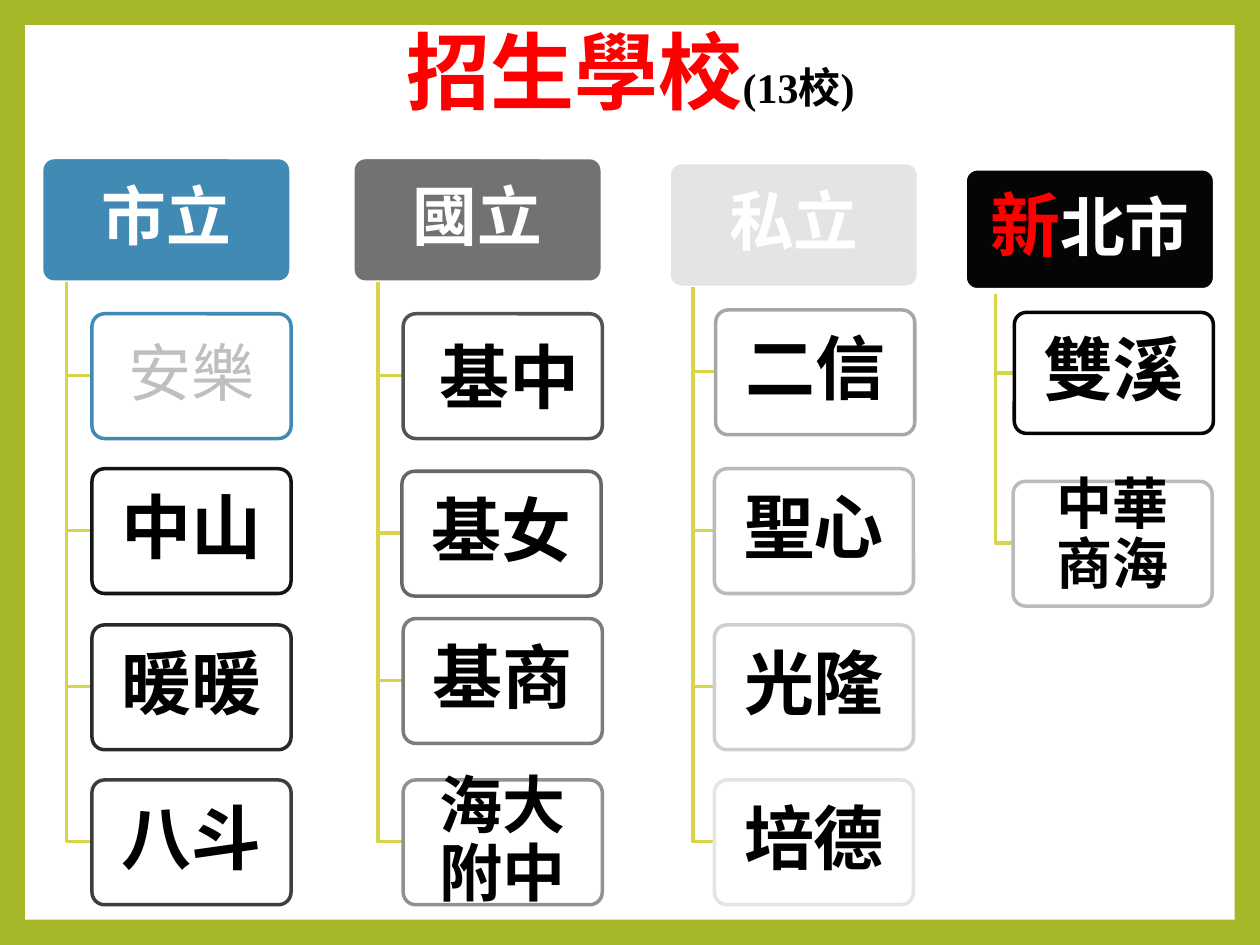
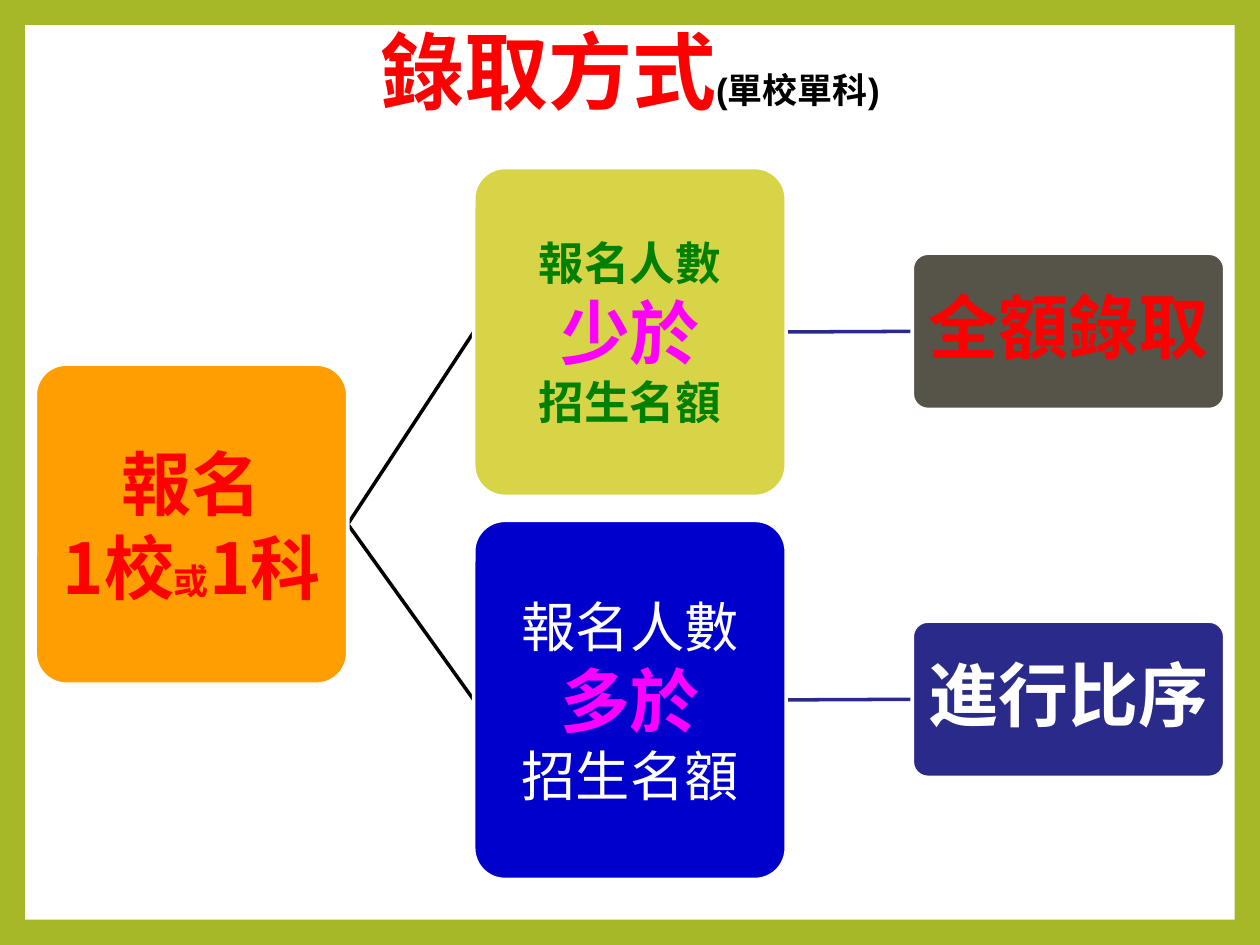
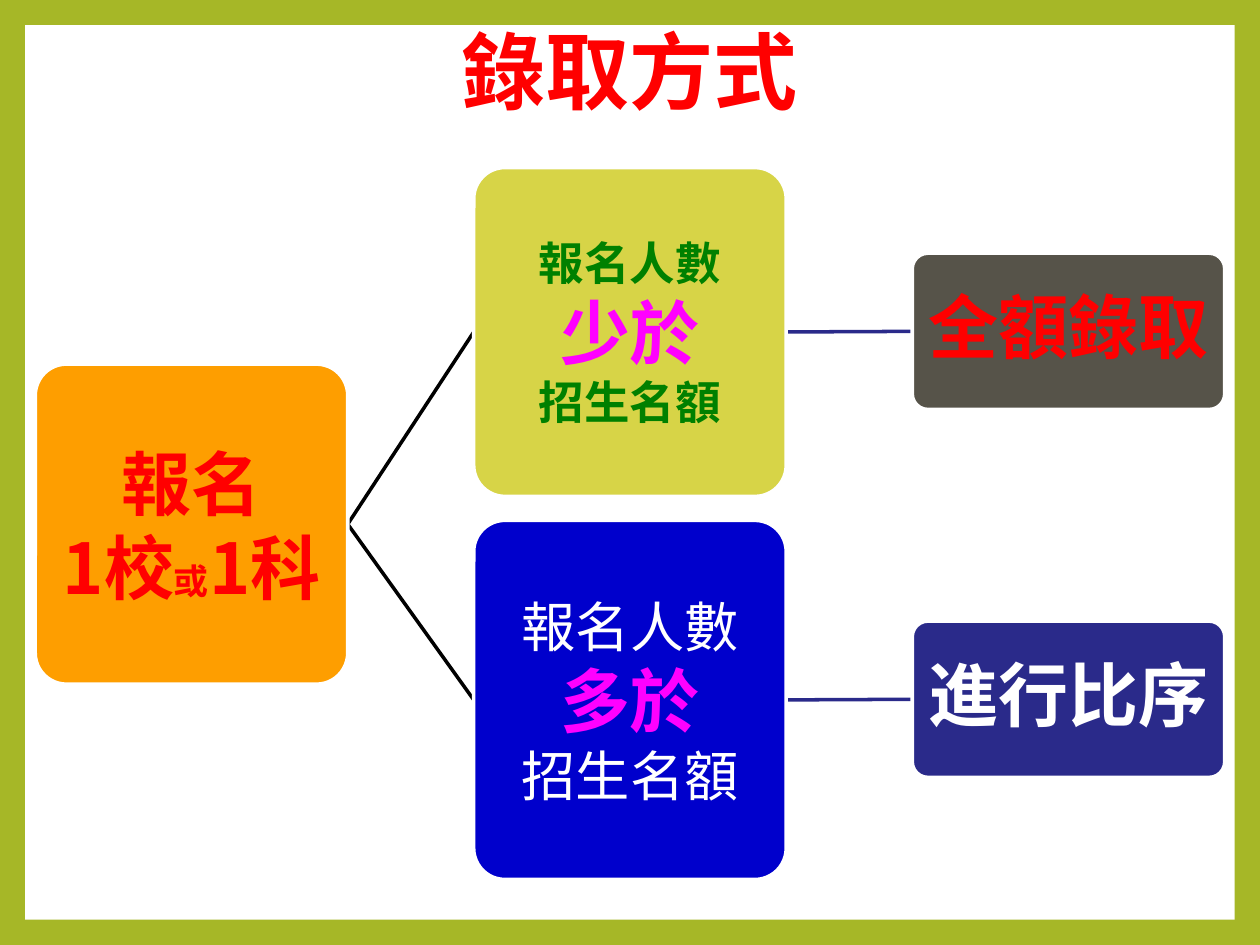
import pptx
import pptx.util
import pptx.dml.color
import pptx.enum.shapes
import pptx.enum.text
import pptx.oxml.ns
from lxml import etree

PX = 9144  # 100 px to the inch
CJK = "Noto Sans CJK SC"
COLORS = {
    "frame": "A6B727", "white": "FFFFFF", "black": "000000", "red": "FF0000",
    "stem": "D7D447", "city": "418AB3", "national": "727272",
    "private": "E4E4E4", "new_taipei": "050505", "muted": "BFBFBF",
    "apply": "FE9E00", "fewer": "D7D447", "more": "0000CC",
    "admit": "565349", "rank": "2A2A8A", "green": "008000", "magenta": "FF00FF",
}
SHAPE = pptx.enum.shapes.MSO_SHAPE
SUB = pptx.oxml.ns.qn


def rgb(name):
    return pptx.dml.color.RGBColor.from_string(COLORS.get(name, name))


def write(frame, lines, insets=(10, 5, 10, 5), spacing=0.9, font=CJK,
          size=40, color="black", bold=True):
    """Fill a frame with lines of (text, overrides) runs."""
    frame.word_wrap = True
    frame.auto_size = pptx.enum.text.MSO_AUTO_SIZE.NONE
    frame.vertical_anchor = pptx.enum.text.MSO_ANCHOR.MIDDLE
    (frame.margin_left, frame.margin_top,
     frame.margin_right, frame.margin_bottom) = [inset * PX for inset in insets]
    for number, runs in enumerate(lines):
        line = frame.add_paragraph() if number else frame.paragraphs[0]
        line.alignment = pptx.enum.text.PP_ALIGN.CENTER
        line.line_spacing = spacing
        for text, changes in runs:
            look = {"font": font, "size": size, "color": color, "bold": bold} | changes
            run = line.add_run()
            run.text = text
            run.font.size = pptx.util.Pt(look["size"])
            run.font.bold = look["bold"]
            run.font.color.rgb = rgb(look["color"])
            run.font.name = look["font"]
            etree.SubElement(run.font._element, SUB("a:ea"), typeface=CJK)


def add_box(slide, place, fill, outline="white", kind=SHAPE.ROUNDED_RECTANGLE):
    box = slide.shapes.add_shape(kind, *[length * PX for length in place])
    box.shadow.inherit = False
    box.fill.solid()
    box.fill.fore_color.rgb = rgb(fill)
    box.line.color.rgb = rgb(outline)
    box.line.width = pptx.util.Pt(2)
    if kind == SHAPE.ROUNDED_RECTANGLE:
        box.adjustments[0] = 0.1
    return box


deck = pptx.Presentation()
deck.slide_width, deck.slide_height = 1000 * PX, 750 * PX

# Slides and titles: (left, width), runs
titles = [
    ((102, 797), [("招生學校", {}),
                  ("(13校)", {"size": 24, "color": "black", "font": "Times New Roman"})]),
    ((0, 1000), [("錄取方式", {}), ("(單校單科)", {"size": 20, "color": "black"})]),
    ((0, 1000), [("錄取方式", {})]),
]
slides = []
for (left, width), runs in titles:
    slide = deck.slides.add_slide(deck.slide_layouts[5])
    title = slide.shapes.title
    title.left, title.top, title.width, title.height = [
        length * PX for length in (left, 2, width, 117)]
    write(title.text_frame, [runs], font="Arial", size=48, color="red")
    slides.append(slide)

# Shared green frame and white panel, kept on the master
master = deck.slide_master
master.background.fill.solid()
master.background.fill.fore_color.rgb = rgb("frame")
panel = add_box(slides[0], (20, 20, 960, 710), "white", kind=SHAPE.RECTANGLE)
panel.line.fill.background()
panel.element.nvSpPr.cNvPr.set("id", "20")
master.shapes.element.insert(2, panel.element)

# Slide 1: school groups
# header runs, size, place, fill, stem (x, top), schools (name, x, y, height, outline, format)
groups = [
    ([("市立", {})], (33, 125, 198, 99), "city", (53, 224), [
        ("安樂", 73, 249, 99, "city", {"size": 36, "color": "muted", "bold": False}),
        ("中山", 73, 372, 99, "141414", {}),
        ("暖暖", 73, 496, 99, "292929", {}),
        ("八斗", 73, 619, 99, "3E3E3E", {})]),
    ([("國立", {})], (280, 125, 198, 99), "national", (300, 224), [
        ("基中", 320, 249, 99, "535353", {"insets": (21, 17, 11, 9)}),
        ("基女", 319, 374, 99, "676767", {}),
        ("基商", 320, 491, 99, "7C7C7C", {}),
        ("海大附中", 320, 619, 99, "919191", {"size": 36, "insets": (8, 6, 8, 6)})]),
    ([("私立", {})], (531, 129, 198, 99), "private", (550, 228), [
        ("二信", 568, 246, 99, "A6A6A6", {}),
        ("聖心", 567, 372, 99, "BABABA", {}),
        ("光隆", 567, 496, 99, "CFCFCF", {}),
        ("培德", 567, 619, 99, "E4E4E4", {})]),
    ([("新", {"size": 40, "color": "red"}), ("北市", {})],
     (766, 134, 198, 96), "new_taipei", (790, 233), [
        ("雙溪", 805, 248, 96, "030303", {}),
        ("中華商海", 804, 382, 99, "BABABA", {"size": 32, "insets": (13, 4, 13, 16)})]),
]
for heading, place, fill, (stem_x, stem_top), schools in groups:
    header = add_box(slides[0], place, fill)
    write(header.text_frame, [heading], insets=(11, 8, 11, 8), size=37, color="white")
    for name, x, y, height, outline, look in schools:
        middle = y + height // 2
        outliner = slides[0].shapes.build_freeform(stem_x, stem_top, scale=PX)
        outliner.add_line_segments([(stem_x, middle), (x, middle)], close=False)
        branch = outliner.convert_to_shape()
        branch.shadow.inherit = False
        branch.fill.background()
        branch.line.color.rgb = rgb("stem")
        branch.line.width = pptx.util.Pt(2)

        school = add_box(slides[0], (x, y, 158, height), "white", outline)
        tint = school.element.spPr.find(SUB("a:solidFill"))[0]
        etree.SubElement(tint, SUB("a:alpha"), val="90000")
        write(school.text_frame, [[(name, {})]], **({"insets": (11, 9, 11, 9)} | look))

# Slides 2 and 3: admission flow
# place, fill, lines, format
steps = {
    "apply": ((28, 289, 248, 254),
              [[("報名", {})], [("1校", {}), ("或", {"size": 20}), ("1科", {})]],
              {"color": "red", "spacing": 1.0}),
    "fewer": ((376, 133, 248, 261),
              [[("報名人數", {})], [("少於", {"size": 40, "color": "magenta"})],
               [("招生名額", {})]],
              {"size": 26, "color": "green", "spacing": 1.0}),
    "more": ((376, 413, 248, 285),
             [[("報名人數", {})],
              [("多於", {"size": 40, "color": "magenta", "bold": True})],
              [("招生名額", {})]],
             {"size": 31, "color": "white", "bold": False, "spacing": 1.0}),
    "admit": ((724, 201, 248, 124), [[("全額錄取", {})]], {"color": "red"}),
    "rank": ((724, 493, 248, 124), [[("進行比序", {})]], {"color": "white"}),
}
links = [("apply", "fewer", "black"), ("apply", "more", "black"),
         ("fewer", "admit", "rank"), ("more", "rank", "rank")]
for slide in slides[1:]:
    boxes = {}
    for step, (place, lines, look) in steps.items():
        boxes[step] = add_box(slide, place, step)
        write(boxes[step].text_frame, lines, insets=(6, 6, 6, 6) if len(lines) == 1
              else (10, 10, 10, 10), **look)
    for source, target, color in links:
        link = slide.shapes.add_connector(
            pptx.enum.shapes.MSO_CONNECTOR.STRAIGHT, 0, 0, 0, 0)
        link.begin_connect(boxes[source], 3)
        link.end_connect(boxes[target], 1)
        link.line.color.rgb = rgb(color)
        link.line.width = pptx.util.Pt(2)
        etree.SubElement(link.element.spPr, SUB("a:effectLst"))
        slide.shapes.element.insert(2, link.element)  # box outlines cover the ends

deck.save("out.pptx")
